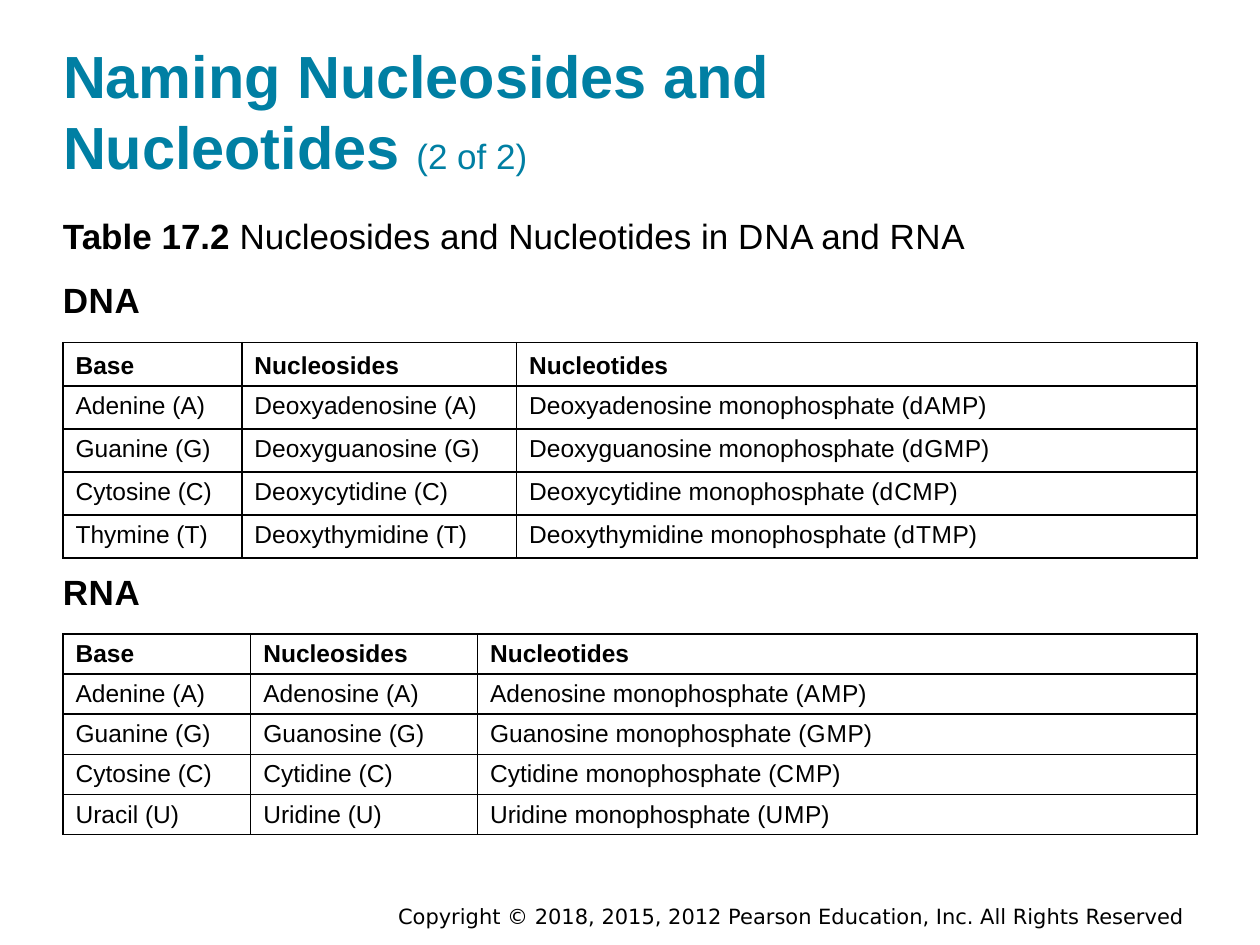
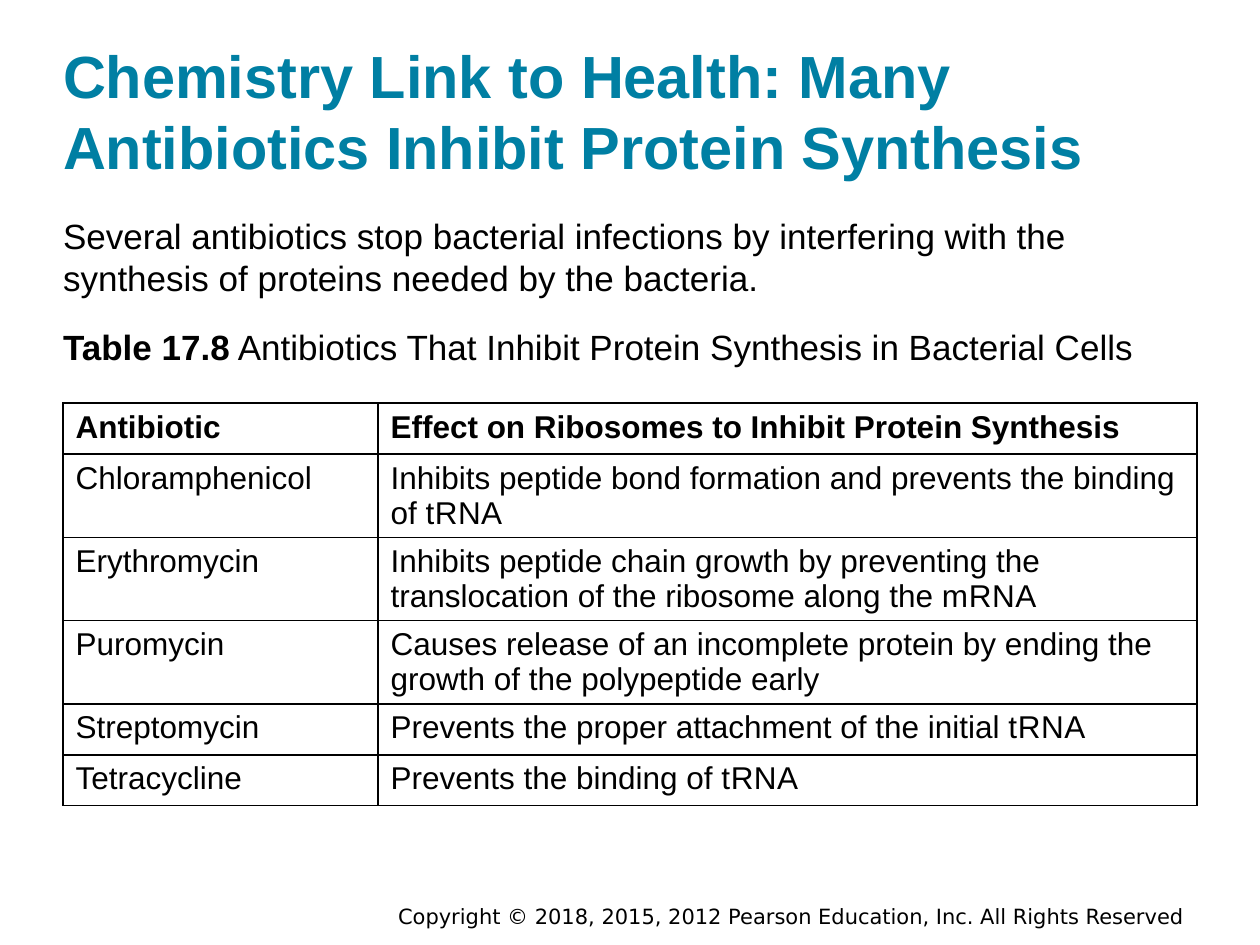
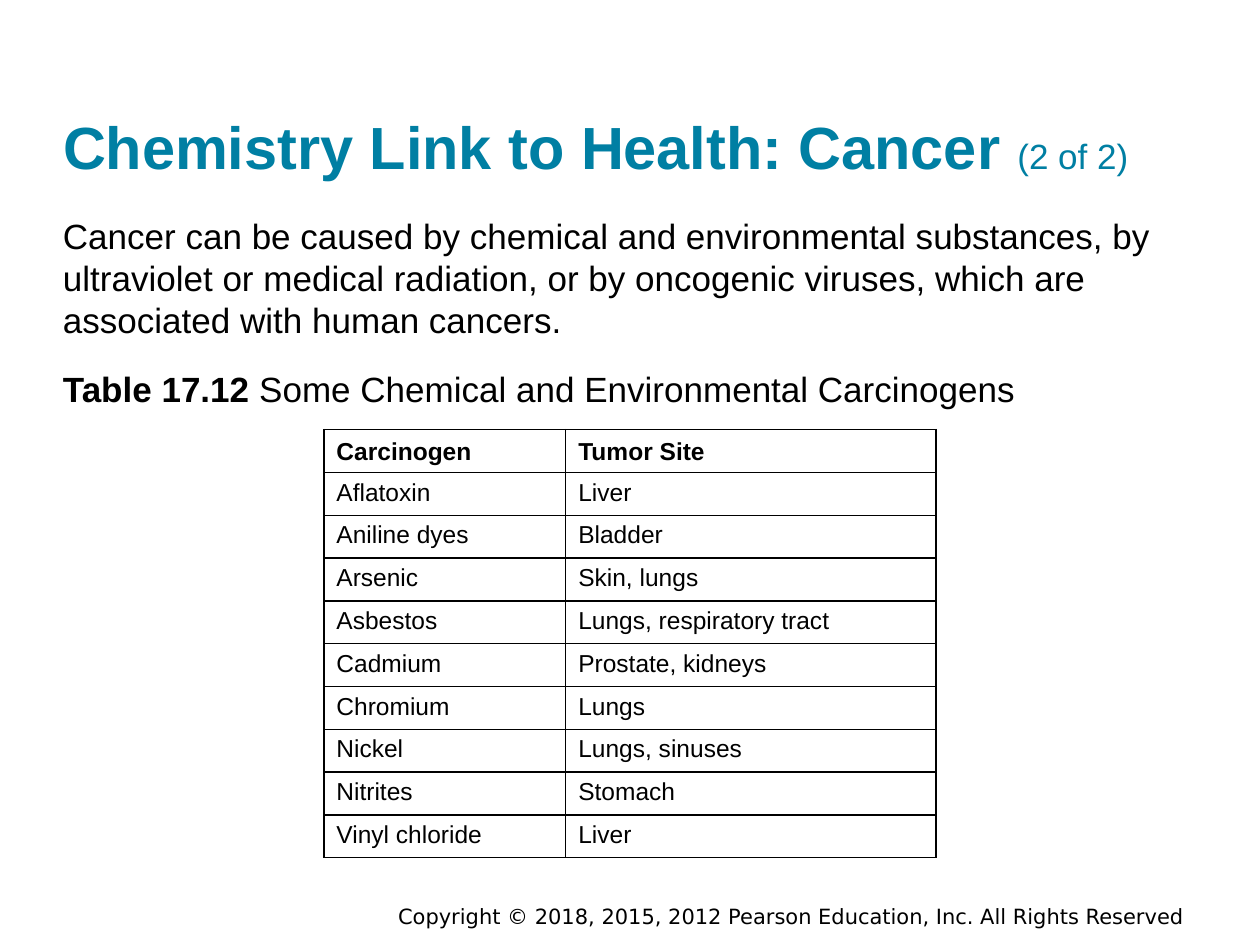
from pptx import Presentation
from pptx.dml.color import RGBColor as RGB
from pptx.enum.text import MSO_ANCHOR as ANCHOR, MSO_AUTO_SIZE as AUTO, PP_ALIGN as ALIGN
from pptx.oxml import parse_xml
from pptx.oxml.ns import nsdecls
from pptx.util import Inches, Pt

COLORS = {"title": "007FA3", "text": "000000", "border": "000000", "cell": "FFFFFF"}
FONT = "Arial"
FOOTER_FONT = "DejaVu Sans"
LEFT, WIDTH = 0.5, 9
HAIR_SIZE = Pt(1)
TITLE = {"size": Pt(34), "bold": True, "name": FONT}
TITLE_PART = {"size": Pt(20), "bold": False, "name": FONT}
BODY = {"size": Pt(20), "bold": False, "name": FONT}
BODY_BOLD = {**BODY, "bold": True}
FOOTER = {"size": Pt(12), "name": FOOTER_FONT}
COPYRIGHT = "Copyright © 2018, 2015, 2012 Pearson Education, Inc. All Rights Reserved"


# Shared helpers
def split_acronyms(text):
    """Cut before each capital that follows a letter, as in d-A-M-P."""
    pieces = [text[0]]
    for before, letter in zip(text, text[1:]):
        if before.isalpha() and letter.isupper():
            pieces.append(letter)
        else:
            pieces[-1] += letter
    return pieces


def add_run(p, text, fmt, color="text"):
    r = p.add_run()
    r.text = text
    for key, value in fmt.items():
        setattr(r.font, key, value)
    r.font.color.rgb = RGB.from_string(COLORS[color])


def add_words(p, text, fmt, color="text"):
    """Add text with a hair space between the letters of its acronyms."""
    for i, piece in enumerate(split_acronyms(text)):
        if i:
            add_run(p, " ", {**fmt, "size": HAIR_SIZE}, color)
        add_run(p, piece, fmt, color)


def place(sp, box):
    for key, value in zip(("left", "top", "width", "height"), box):
        setattr(sp, key, Inches(value))


def set_frame(tf, anchor, margin=0.0):
    frame = {"word_wrap": True, "auto_size": AUTO.NONE, "vertical_anchor": anchor}
    for side in ("left", "top", "right", "bottom"):
        frame[f"margin_{side}"] = Inches(margin)
    for key, value in frame.items():
        setattr(tf, key, value)


def add_text(slide, box, *runs):
    tf = slide.shapes.add_textbox(*map(Inches, box)).text_frame
    set_frame(tf, ANCHOR.TOP)
    for text, fmt in runs:
        add_words(tf.paragraphs[0], text, fmt)


def add_caption(slide, box, number, text):
    add_text(slide, box, (f"Table {number}", BODY_BOLD), (f" {text}", BODY))


# Slide with its title and copyright line
def add_slide(prs, title, part="", width=WIDTH):
    slide = prs.slides.add_slide(prs.slide_layouts[5])
    sp = slide.shapes.title
    place(sp, (LEFT, 0.24, width, 1.2))
    set_frame(sp.text_frame, ANCHOR.BOTTOM)
    p = sp.text_frame.paragraphs[0]
    p.alignment = ALIGN.LEFT
    add_run(p, f"{title} " if part else title, TITLE, "title")
    if part:
        add_run(p, part, TITLE_PART, "title")

    tf = slide.shapes.add_textbox(*map(Inches, (2.9, 7.04, 6.6, 0.46))).text_frame
    set_frame(tf, ANCHOR.MIDDLE, 0.1)
    p = tf.paragraphs[0]
    p.alignment = ALIGN.RIGHT
    add_run(p, COPYRIGHT, FOOTER)
    return slide


# Bordered table with a bold first row
def add_borders(cell):
    tc_pr = cell._tc.get_or_add_tcPr()
    for i, side in enumerate(("lnL", "lnR", "lnT", "lnB")):
        tc_pr.insert(i, parse_xml(
            f'<a:{side} {nsdecls("a")} w="12700"><a:solidFill>'
            f'<a:srgbClr val="{COLORS["border"]}"/></a:solidFill></a:{side}>'))


def add_grid(slide, left, top, cols, heights, rows, size=14, head_anchor=ANCHOR.BOTTOM):
    box = map(Inches, (left, top, sum(cols), sum(heights)))
    table = slide.shapes.add_table(len(rows), len(cols), *box).table
    table.horz_banding = False
    for column, width in zip(table.columns, cols):
        column.width = Inches(width)
    for i, (row, height) in enumerate(zip(rows, heights)):
        table.rows[i].height = Inches(height)
        for j, text in enumerate(row):
            cell = table.cell(i, j)
            cell.fill.solid()
            cell.fill.fore_color.rgb = RGB.from_string(COLORS["cell"])
            cell.vertical_anchor = ANCHOR.TOP if i else head_anchor
            fmt = {"size": Pt(size), "bold": i == 0, "name": FONT}
            add_words(cell.text_frame.paragraphs[0], text, fmt)
            add_borders(cell)


# Slide 1: nucleosides and nucleotides
def nucleotide_slide(prs):
    slide = add_slide(prs, "Naming Nucleosides and Nucleotides", "(2 of 2)", 7.63)
    add_caption(slide, (LEFT, 1.7, 7.63, 0.41), "17.2",
                "Nucleosides and Nucleotides in DNA and RNA")
    head = ("Base", "Nucleosides", "Nucleotides")
    dna = [
        head,
        ("Adenine (A)", "Deoxyadenosine (A)", "Deoxyadenosine monophosphate (dAMP)"),
        ("Guanine (G)", "Deoxyguanosine (G)", "Deoxyguanosine monophosphate (dGMP)"),
        ("Cytosine (C)", "Deoxycytidine (C)", "Deoxycytidine monophosphate (dCMP)"),
        ("Thymine (T)", "Deoxythymidine (T)", "Deoxythymidine monophosphate (dTMP)"),
    ]
    rna = [
        head,
        ("Adenine (A)", "Adenosine (A)", "Adenosine monophosphate (AMP)"),
        ("Guanine (G)", "Guanosine (G)", "Guanosine monophosphate (GMP)"),
        ("Cytosine (C)", "Cytidine (C)", "Cytidine monophosphate (CMP)"),
        ("Uracil (U)", "Uridine (U)", "Uridine monophosphate (UMP)"),
    ]
    sections = (
        ("DNA", 2.21, 2.72, (1.42, 2.18, 5.4), 1.71, dna),
        ("RNA", 4.53, 5.03, (1.49, 1.8, 5.71), 1.59, rna),
    )
    for name, top, grid_top, cols, height, rows in sections:
        add_text(slide, (LEFT, top, 0.76, 0.4), (name, BODY_BOLD))
        add_grid(slide, LEFT, grid_top, cols, [height / len(rows)] * len(rows), rows)


# Slide 2: antibiotics
def antibiotic_slide(prs):
    slide = add_slide(
        prs, "Chemistry Link to Health: Many Antibiotics Inhibit Protein Synthesis")
    add_text(slide, (LEFT, 1.7, 8.78, 0.74), (
        "Several antibiotics stop bacterial infections by interfering with the "
        "synthesis of proteins needed by the bacteria.", BODY))
    add_caption(slide, (LEFT, 2.58, 8.78, 0.43), "17.8",
                "Antibiotics That Inhibit Protein Synthesis in Bacterial Cells")
    rows = [
        ("Antibiotic", "Effect on Ribosomes to Inhibit Protein Synthesis"),
        ("Chloramphenicol",
         "Inhibits peptide bond formation and prevents the binding of tRNA"),
        ("Erythromycin", "Inhibits peptide chain growth by preventing the "
                         "translocation of the ribosome along the mRNA"),
        ("Puromycin", "Causes release of an incomplete protein by ending the "
                      "growth of the polypeptide early"),
        ("Streptomycin", "Prevents the proper attachment of the initial tRNA"),
        ("Tetracycline", "Prevents the binding of tRNA"),
    ]
    one_line, two_lines = 0.405, 0.66
    heights = [one_line] + [two_lines] * 3 + [one_line] * 2
    add_grid(slide, LEFT, 3.2, (2.5, 6.5), heights, rows, 18, ANCHOR.TOP)


# Slide 3: carcinogens
def carcinogen_slide(prs):
    slide = add_slide(prs, "Chemistry Link to Health: Cancer", "(2 of 2)")
    add_text(slide, (LEFT, 1.7, WIDTH, 1.09), (
        "Cancer can be caused by chemical and environmental substances, by "
        "ultraviolet or medical radiation, or by oncogenic viruses, which are "
        "associated with human cancers.", BODY))
    add_caption(slide, (LEFT, 2.92, 7.9, 0.4), "17.12",
                "Some Chemical and Environmental Carcinogens")
    rows = [
        ("Carcinogen", "Tumor Site"),
        ("Aflatoxin", "Liver"),
        ("Aniline dyes", "Bladder"),
        ("Arsenic", "Skin, lungs"),
        ("Asbestos", "Lungs, respiratory tract"),
        ("Cadmium", "Prostate, kidneys"),
        ("Chromium", "Lungs"),
        ("Nickel", "Lungs, sinuses"),
        ("Nitrites", "Stomach"),
        ("Vinyl chloride", "Liver"),
    ]
    add_grid(slide, 2.57, 3.41, (1.92, 2.94), [0.34] * len(rows), rows)


def main():
    prs = Presentation()
    prs.slide_width, prs.slide_height = Inches(10), Inches(7.5)
    nucleotide_slide(prs)
    antibiotic_slide(prs)
    carcinogen_slide(prs)
    prs.save("out.pptx")


if __name__ == "__main__":
    main()
